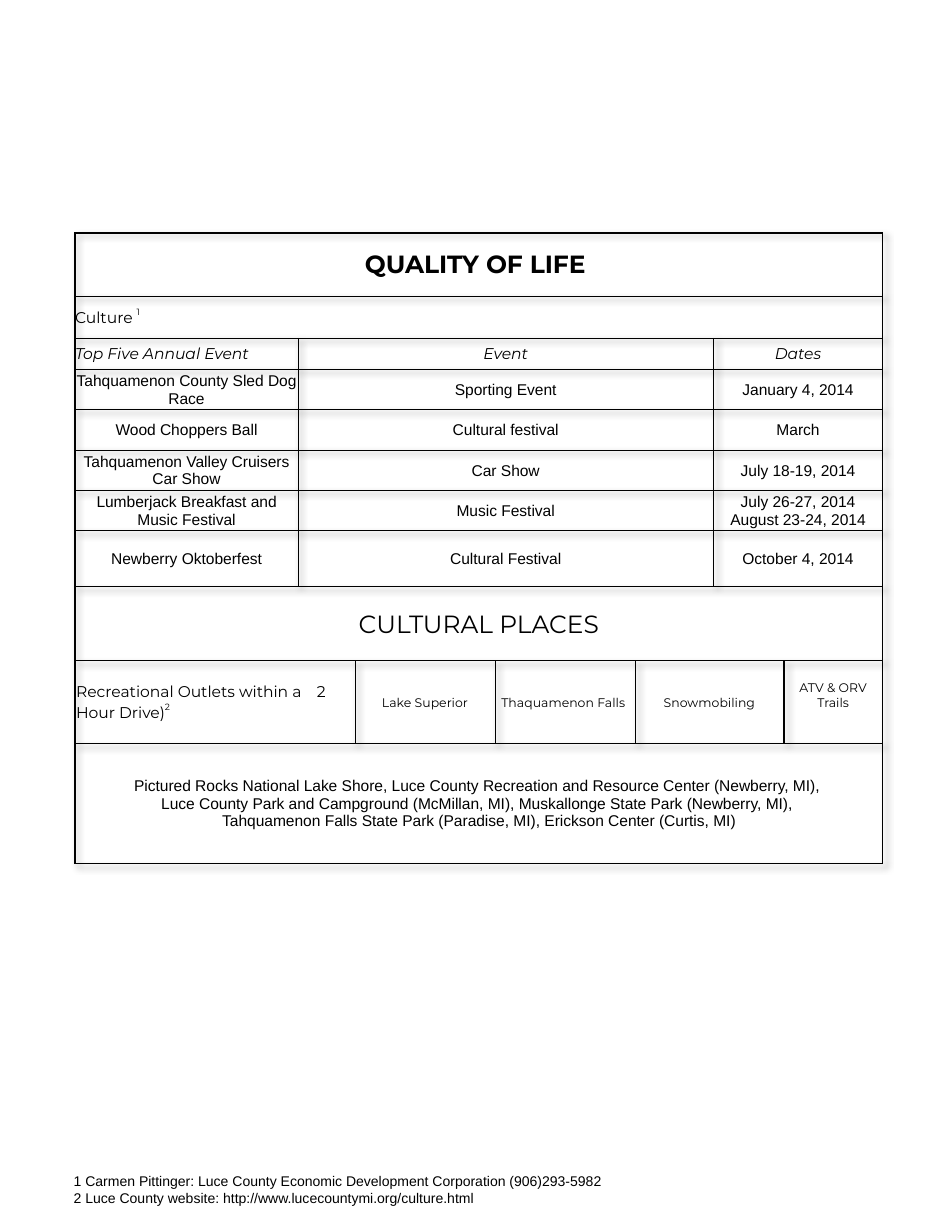
from lxml.etree import SubElement
from pptx import Presentation
from pptx.dml.color import RGBColor
from pptx.enum.text import MSO_ANCHOR, PP_ALIGN
from pptx.oxml import parse_xml
from pptx.oxml.ns import nsdecls, qn
from pptx.util import Inches, Pt

COLORS = {"ink": "000000"}
INK = RGBColor.from_string(COLORS["ink"])
COLUMN_WIDTHS = [1.99, 0.51, 1.25, 1.25, 0.7, 0.63, 0.88]
ROW_HEIGHTS = [0.57, 0.37, 0.28, 0.36, 0.36, 0.36, 0.36, 0.5, 0.66, 0.74, 1.07]
FULL, EVENTS, OUTLETS = [0], [0, 1, 5], [0, 2, 3, 4, 6]
LEFT_ALIGNED = {(1, 0), (2, 0), (9, 0)}
SUPERSCRIPTS = {(1, 0): "1", (9, 0): "2"}

rows = [
    (FULL, "Montserrat", 16, ["QUALITY OF LIFE "]),
    (FULL, "Montserrat", 10, ["Culture "]),
    (EVENTS, "Montserrat", 10, ["Top Five Annual Event", "Event", "Dates"]),
    (EVENTS, "Arial", 10, ["Tahquamenon County Sled Dog Race", "Sporting Event", "January 4, 2014"]),
    (EVENTS, "Arial", 10, ["Wood Choppers Ball", "Cultural festival", "March"]),
    (EVENTS, "Arial", 10, ["Tahquamenon Valley Cruisers Car Show", "Car Show", "July 18-19, 2014"]),
    (EVENTS, "Arial", 10, ["Lumberjack Breakfast and Music Festival", "Music Festival",
                           "July 26-27, 2014\vAugust 23-24, 2014"]),
    (EVENTS, "Arial", 10, ["Newberry Oktoberfest", "Cultural Festival", "October 4, 2014"]),
    (FULL, "Montserrat", 16, ["CULTURAL PLACES"]),
    (OUTLETS, "Montserrat", 8, ["Recreational Outlets within a\t2 Hour Drive)", "Lake Superior",
                                "Thaquamenon Falls ", "Snowmobiling", "ATV & ORV Trails"]),
    (FULL, "Arial", 10, [
        "Pictured Rocks National Lake Shore, Luce County Recreation and Resource Center (Newberry, MI), \n"
        "Luce County Park and Campground (McMillan, MI), Muskallonge State Park (Newberry, MI), \n"
        "Tahquamenon Falls State Park (Paradise, MI), Erickson Center (Curtis, MI)"]),
]
last_row, column_count = len(rows) - 1, len(COLUMN_WIDTHS)


def set_borders(cell, widths):
    properties = cell._tc.get_or_add_tcPr()
    for side, width in zip("LRTB", widths):
        properties.append(parse_xml(
            f'<a:ln{side} {nsdecls("a")} w="{Pt(width)}"><a:solidFill>'
            f'<a:srgbClr val="{COLORS["ink"]}"/></a:solidFill></a:ln{side}>'))
    cell.fill.background()


def style(font, name, size):
    font.name, font.size, font.color.rgb = name, Pt(size), INK


prs = Presentation()
prs.slide_width, prs.slide_height = Inches(8.5), Inches(11)
slide = prs.slides.add_slide(prs.slide_layouts[6])

quality = slide.shapes.add_table(len(rows), column_count, Inches(0.67), Inches(2.08),
                                 Inches(7.21), Inches(5.64)).table
quality.first_row = quality.horz_banding = False
quality._tbl.tblPr.insert(0, parse_xml(
    f'<a:effectLst {nsdecls("a")}><a:outerShdw blurRad="50800" dist="38100" dir="2700000" algn="tl">'
    f'<a:srgbClr val="{COLORS["ink"]}"><a:alpha val="40000"/></a:srgbClr></a:outerShdw></a:effectLst>'))
for column, width in zip(quality.columns, COLUMN_WIDTHS):
    column.width = Inches(width)

for r, (starts, face, size, texts) in enumerate(rows):
    quality.rows[r].height = Inches(ROW_HEIGHTS[r])
    inset = Inches(0 if r < 3 else 0.01)
    for start, end, text in zip(starts, starts[1:] + [column_count], texts):
        heavy = [start == 0 or (r, start) == (9, 6),
                 end == column_count or (r, end) == (9, 6),
                 r < 2, r in (0, last_row)]
        for c in range(start, end):
            cell = quality.cell(r, c)
            cell.margin_left = cell.margin_right = cell.margin_top = inset
            cell.margin_bottom = 0
            cell.vertical_anchor = MSO_ANCHOR.MIDDLE
            set_borders(cell, [1 if edge else 0.5 for edge in heavy])
            cell.text_frame.paragraphs[0].font.size = Pt(size)
        cell = quality.cell(r, start)
        if end - start > 1:
            cell.merge(quality.cell(r, end - 1))
        cell.text_frame.text = text
        if (r, start) == (9, 6):
            cell.margin_bottom = Inches(0.13)
        for paragraph in cell.text_frame.paragraphs:
            paragraph.alignment = PP_ALIGN.LEFT if (r, start) in LEFT_ALIGNED else PP_ALIGN.CENTER
            if "\t" in text:
                properties = paragraph._p.get_or_add_pPr()
                stops = SubElement(properties, qn("a:tabLst"))
                properties.insert(0, stops)
                SubElement(stops, qn("a:tab"), pos=str(Inches(2.15)), algn="l")
            style(paragraph.font, face, 10 if (r, start) == (9, 0) else size)
            paragraph.font.bold = r == 0
            paragraph.font.italic = r == 2
            if (r, start) in SUPERSCRIPTS:
                note_mark = paragraph.add_run()
                note_mark.text = SUPERSCRIPTS[r, start]
                note_mark.font._element.set("baseline", "50000")

notes = slide.shapes.add_textbox(Inches(0.56), Inches(10.42), Inches(7.94), Inches(0.4)).text_frame
notes.word_wrap = True
notes.text = ("1 Carmen Pittinger: Luce County Economic Development Corporation (906)293-5982\n"
              "2 Luce County website: http://www.lucecountymi.org/culture.html")
for paragraph in notes.paragraphs:
    style(paragraph.font, "Arial", 9)

prs.save("out.pptx")
